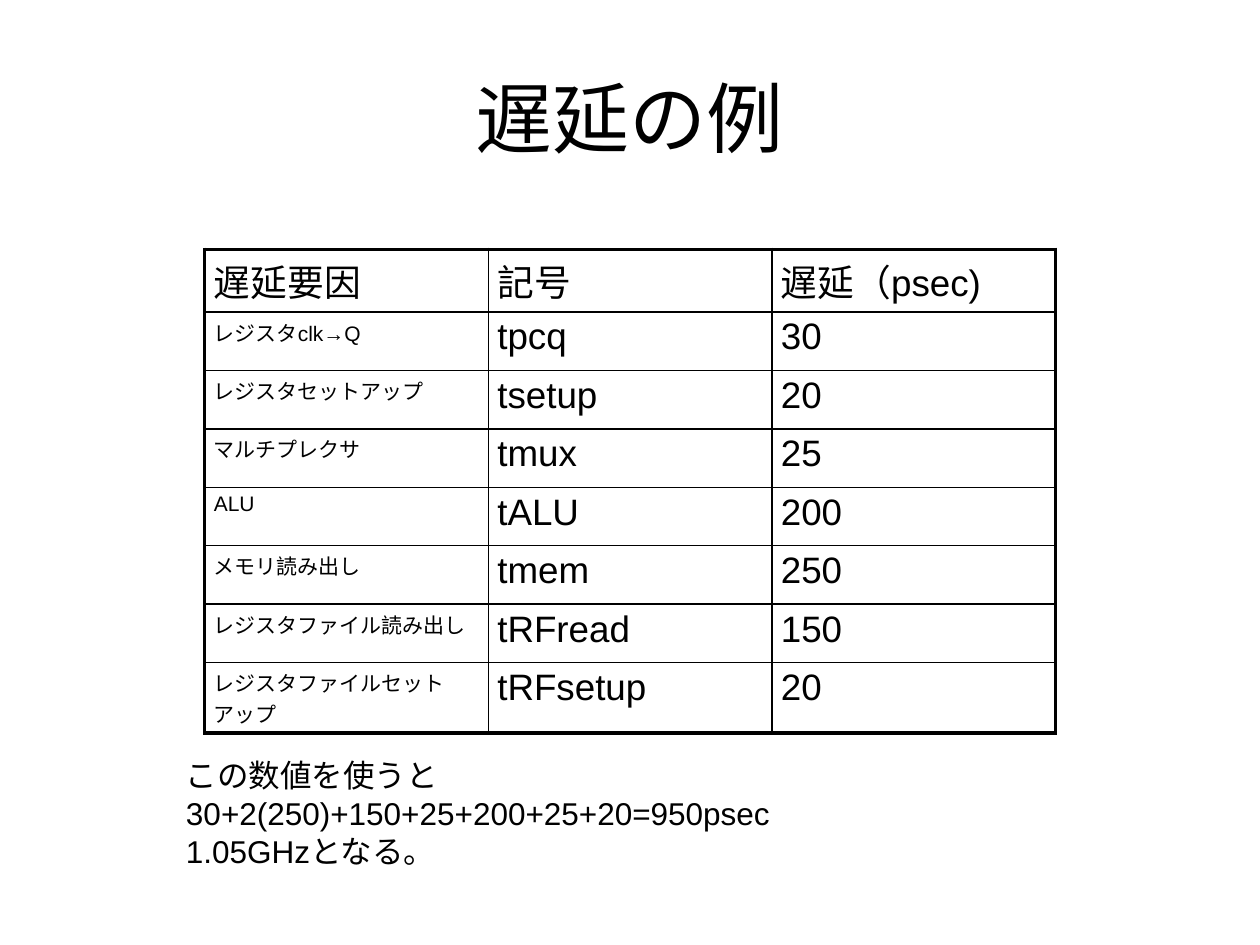
"""Build a slide that lists delay factors and the resulting clock rate."""
import pptx
import pptx.dml.color
import pptx.enum.text
import pptx.oxml
import pptx.oxml.ns
import pptx.util

Pt = pptx.util.Pt
HUES = {"ink": "000000"}
ROWS = [
    ("遅延要因", "記号", "遅延（psec)"),
    ("レジスタclk→Q", "tpcq", "30"),
    ("レジスタセットアップ", "tsetup", "20"),
    ("マルチプレクサ", "tmux", "25"),
    ("ALU", "tALU", "200"),
    ("メモリ読み出し", "tmem", "250"),
    ("レジスタファイル読み出し", "tRFread", "150"),
    ("レジスタファイルセットアップ", "tRFsetup", "20"),
]
NOTES = ["この数値を使うと30+2(250)+150+25+200+25+20=950psec", "1.05GHzとなる。"]


class Pen:
    def __init__(self, slide, font="Arial", hue="ink"):
        self.slide, self.font, self.hue = slide, font, HUES[hue]

    def style(self, para, size):
        for run in para.runs:
            run.font.name = self.font
            run.font.size = Pt(size)
            run.font.color.rgb = pptx.dml.color.RGBColor.from_string(self.hue)

    def place(self, shape, box):
        shape.left, shape.top, shape.width, shape.height = map(Pt, box)

    def title(self, text, box, size):
        shape = self.slide.shapes.title
        self.place(shape, box)
        frame = shape.text_frame
        frame.text = text
        frame.vertical_anchor = pptx.enum.text.MSO_ANCHOR.MIDDLE
        frame.paragraphs[0].alignment = pptx.enum.text.PP_ALIGN.CENTER
        self.style(frame.paragraphs[0], size)

    def note(self, lines, box, size):
        frame = self.slide.shapes.add_textbox(*map(Pt, box)).text_frame
        frame.word_wrap = True
        frame.text = "\n".join(lines)
        for para in frame.paragraphs:
            self.style(para, size)

    def edge(self, cell, side, width):
        space = pptx.oxml.ns.nsdecls("a")
        cell._tc.get_or_add_tcPr().append(pptx.oxml.parse_xml(
            f'<a:ln{side} {space} w="{Pt(width)}"><a:solidFill>'
            f'<a:srgbClr val="{self.hue}"/></a:solidFill></a:ln{side}>'))

    def cell(self, cell, text, size, outer):
        cell.text = text
        cell.margin_left = cell.margin_right = Pt(5.2)
        cell.margin_top = cell.margin_bottom = Pt(2.7)
        for side in "LRTB":
            self.edge(cell, side, 2.25 if side in outer else 1)
        cell.fill.background()
        para = cell.text_frame.paragraphs[0]
        space = pptx.oxml.ns.nsdecls("a")
        para._p.get_or_add_pPr().append(pptx.oxml.parse_xml(
            f'<a:spcBef {space}><a:spcPct val="20000"/></a:spcBef>'))
        self.style(para, size)

    def table(self, rows, box):
        last, end = len(rows) - 1, len(rows[0]) - 1
        grid = self.slide.shapes.add_table(
            last + 1, end + 1, *map(Pt, box)).table
        grid.first_row = grid.horz_banding = False
        for r, row in enumerate(rows):
            for c, text in enumerate(row):
                outer = [side for side, hit in zip(
                    "LRTB", (c == 0, c == end, r == 0, r == last)) if hit]
                self.cell(grid.cell(r, c), text, 12 if r and not c else 21, outer)


def main():
    deck = pptx.Presentation()
    deck.slide_width, deck.slide_height = Pt(720), Pt(540)
    pen = Pen(deck.slides.add_slide(deck.slide_layouts.get_by_name("Title Only")))
    pen.title("遅延の例", (36, 21.6, 648, 90), 44)
    pen.table(ROWS, (117, 142.5, 486, 267.2))
    pen.note(NOTES, (99.2, 428.4, 485, 51), 18)
    deck.save("out.pptx")


if __name__ == "__main__":
    main()
